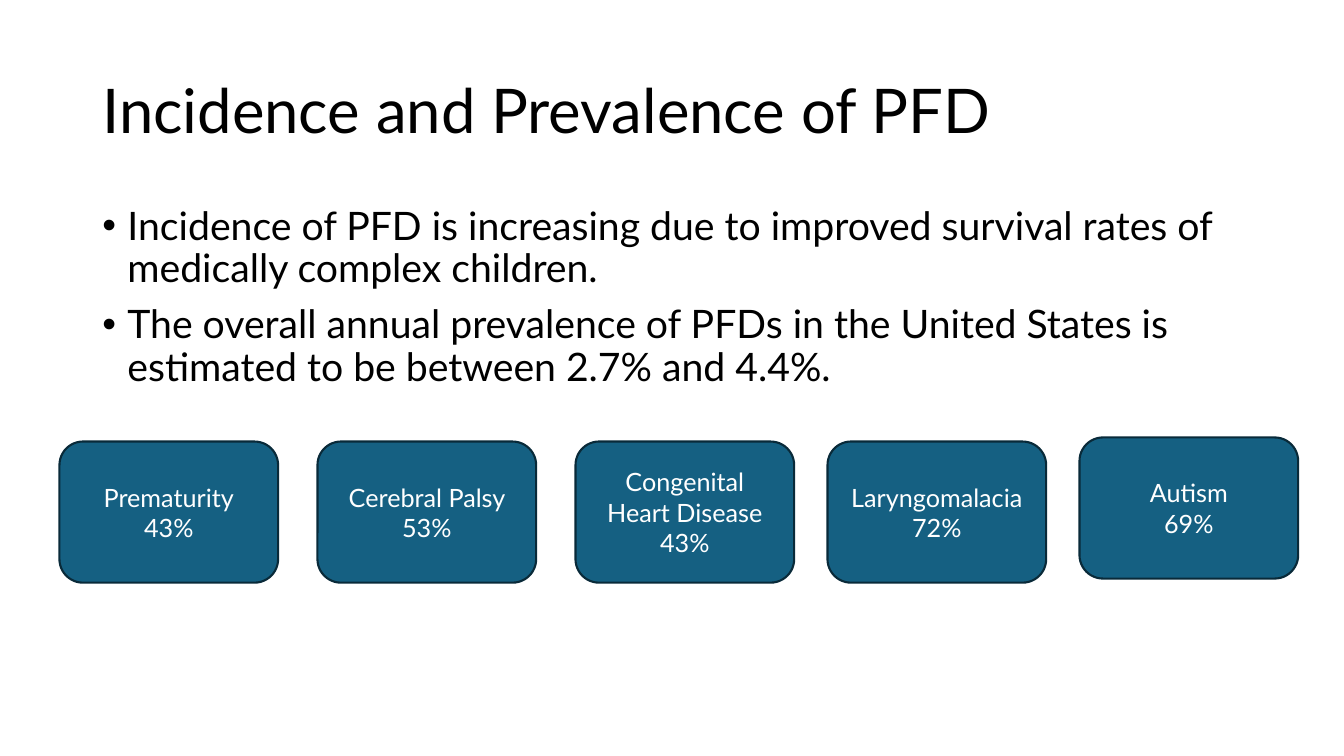
from dataclasses import dataclass

import pptx
import pptx.dml.color
import pptx.enum.shapes
import pptx.enum.text
import pptx.util
from lxml import etree

Pt = pptx.util.Pt
RGBColor = pptx.dml.color.RGBColor
MSO_ANCHOR = pptx.enum.text.MSO_ANCHOR
PP_ALIGN = pptx.enum.text.PP_ALIGN


@dataclass(frozen=True)
class Theme:
    font: str = "Lato"
    text: RGBColor = RGBColor(0x00, 0x00, 0x00)
    card_text: RGBColor = RGBColor(0xFF, 0xFF, 0xFF)
    card_fill: RGBColor = RGBColor(0x15, 0x60, 0x82)
    card_line: RGBColor = RGBColor(0x09, 0x2A, 0x39)
    title_size: int = 44
    body_size: int = 28
    card_size: int = 18


THEME = Theme()
TEXT_LEFT, TEXT_WIDTH = 66, 828
CARD_WIDTH, CARD_HEIGHT = 156.2, 100.8

TITLE = "Incidence and Prevalence of PFD"
BULLETS = [
    "Incidence of PFD is increasing due to improved survival rates of medically complex children.",
    "The overall annual prevalence of PFDs in the United States is estimated to be between 2.7% and 4.4%.",
]
# Left, top and paragraphs of each condition card
CARDS = [
    (42.5, 315.4, ["Prematurity", "43%"]),
    (226.8, 315.4, ["Cerebral Palsy 53%"]),
    (411.1, 315.4, ["Congenital Heart Disease", "43%"]),
    (591.1, 315.4, ["Laryngomalacia", "72%"]),
    (771.1, 312.5, ["Autism", "69%"]),
]


def write_paragraphs(text_frame, texts, size, color):
    text_frame.word_wrap = True
    text_frame.text = "\n".join(texts)
    for paragraph in text_frame.paragraphs:
        paragraph.font.name = THEME.font
        paragraph.font.size = Pt(size)
        paragraph.font.color.rgb = color


def add_text(slide, top, height, texts, size):
    text_box = slide.shapes.add_textbox(Pt(TEXT_LEFT), Pt(top), Pt(TEXT_WIDTH), Pt(height))
    text_frame = text_box.text_frame
    write_paragraphs(text_frame, texts, size, THEME.text)
    for paragraph in text_frame.paragraphs:
        paragraph.line_spacing = 0.9
    return text_frame


def add_bullet(paragraph):
    """Give the paragraph a round bullet with a hanging indent."""
    paragraph.space_before = Pt(10)
    properties = paragraph._p.get_or_add_pPr()
    properties.set("marL", str(Pt(18)))
    properties.set("indent", str(Pt(-18)))
    bullet_font = etree.Element(pptx.oxml.ns.qn("a:buFont"), typeface="Arial")
    bullet = etree.Element(pptx.oxml.ns.qn("a:buChar"), char="•")
    properties.insert_element_before(bullet_font, "a:buChar", "a:tabLst", "a:defRPr", "a:extLst")
    properties.insert_element_before(bullet, "a:tabLst", "a:defRPr", "a:extLst")


def add_card(slide, left, top, texts):
    card = slide.shapes.add_shape(
        pptx.enum.shapes.MSO_SHAPE.ROUNDED_RECTANGLE,
        Pt(left), Pt(top), Pt(CARD_WIDTH), Pt(CARD_HEIGHT),
    )
    card.shadow.inherit = False
    card.fill.solid()
    card.fill.fore_color.rgb = THEME.card_fill
    card.line.color.rgb = THEME.card_line
    card.line.width = Pt(1.5)
    card.text_frame.vertical_anchor = MSO_ANCHOR.MIDDLE
    write_paragraphs(card.text_frame, texts, THEME.card_size, THEME.card_text)
    for paragraph in card.text_frame.paragraphs:
        paragraph.alignment = PP_ALIGN.CENTER


def main():
    presentation = pptx.Presentation()
    presentation.slide_width = Pt(960)
    presentation.slide_height = Pt(540)
    slide = presentation.slides.add_slide(presentation.slide_layouts[6])

    title = add_text(slide, 28.8, 104.4, [TITLE], THEME.title_size)
    title.vertical_anchor = MSO_ANCHOR.MIDDLE

    body = add_text(slide, 143.8, 342.6, BULLETS, THEME.body_size)
    for paragraph in body.paragraphs:
        add_bullet(paragraph)

    for left, top, texts in CARDS:
        add_card(slide, left, top, texts)

    presentation.save("out.pptx")


if __name__ == "__main__":
    main()
